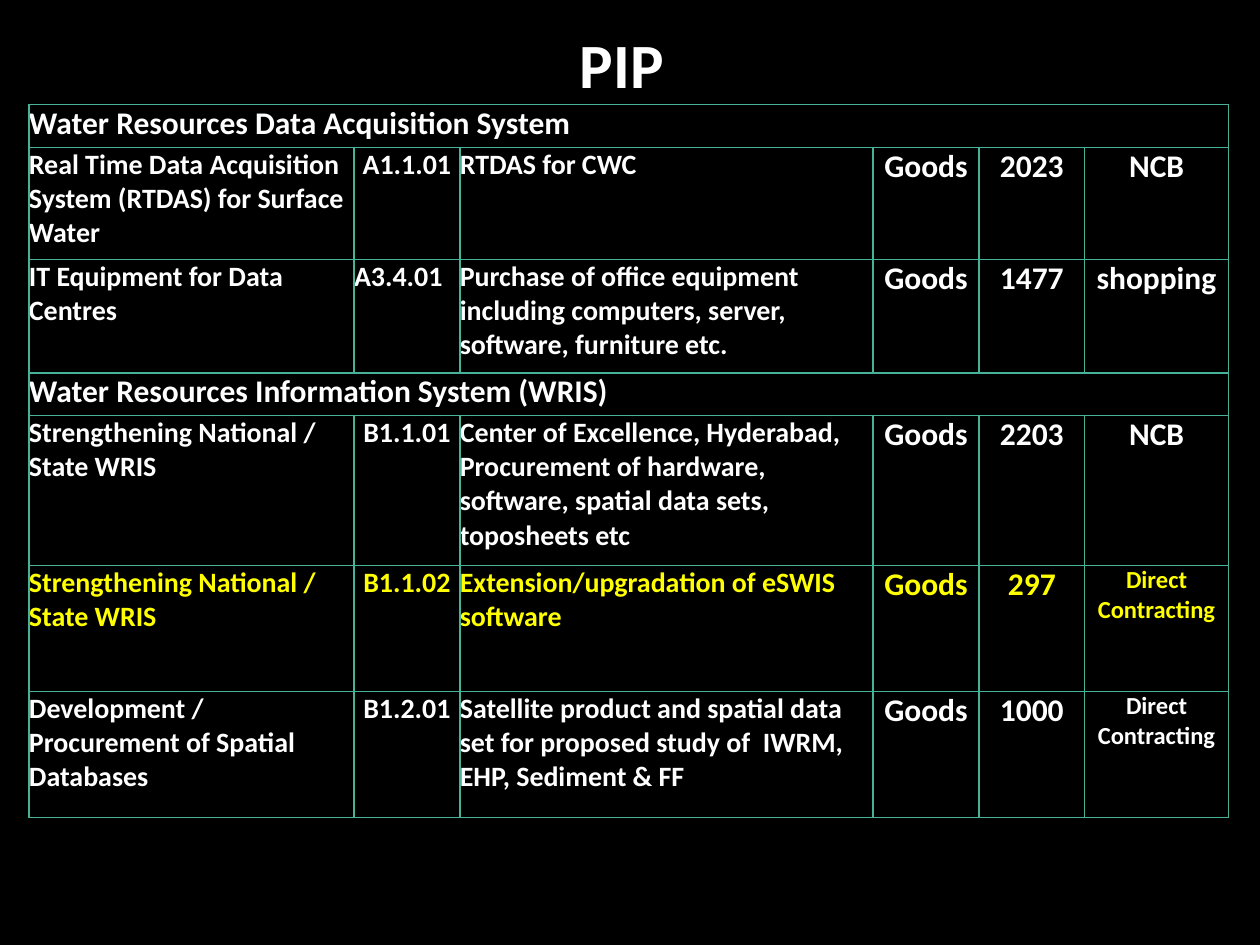
from lxml import etree
from pptx import Presentation
from pptx import util as u
from pptx.dml.color import RGBColor
from pptx.enum import text
from pptx.oxml import ns

THEME = {
    "font": "Calibri",
    "background": RGBColor.from_string("000000"),
    "normal": RGBColor.from_string("FFFFFF"),
    "highlight": RGBColor.from_string("FFFF00"),
    "border": "46B298",
    "title": 36,
    "section": 18,
    "detail": 16,
    "value": 18,
    "long_method": 14,
}

TITLE = "PIP"
SECTIONS = [
    ("Water Resources Data Acquisition System", [
        ("Real Time Data Acquisition System (RTDAS) for Surface Water",
         "A1.1.01", "RTDAS for CWC", "Goods", "2023", "NCB"),
        ("IT Equipment for Data Centres", "A3.4.01",
         "Purchase of office equipment  including computers, server, software, furniture etc.",
         "Goods", "1477", "shopping"),
    ]),
    ("Water Resources Information System (WRIS)", [
        ("Strengthening National / State WRIS", "B1.1.01",
         "Center of Excellence, Hyderabad, Procurement of hardware, software, "
         "spatial data sets, toposheets etc", "Goods", "2203", "NCB"),
        ("Strengthening National / State WRIS", "B1.1.02",
         "Extension/upgradation of eSWIS software",
         "Goods", "297", "Direct Contracting"),
        ("Development / Procurement of Spatial Databases", "B1.2.01",
         "Satellite product and spatial data set for proposed study of  IWRM, "
         "EHP, Sediment & FF", "Goods", "1000", "Direct Contracting"),
    ]),
]
HIGHLIGHTED_CODE = "B1.1.02"
LEFT_ALIGNED_CODE = "A3.4.01"
COLUMN_WIDTHS = [2.58, 0.84, 3.28, 0.84, 0.84, 1.14]
ROW_HEIGHTS = [0.34, 0.89, 0.9, 0.34, 1.19, 1, 1]
CENTRED_COLUMNS = {1, 3, 4, 5}
FIRST_VALUE_COLUMN = 3


def add_run(paragraph, wording, size, color):
    run = paragraph.add_run()
    run.text = wording
    run.font.name = THEME["font"]
    run.font.size = u.Pt(size)
    run.font.bold = True
    run.font.color.rgb = color


def format_cell(cell):
    cell.margin_left = cell.margin_right = cell.margin_top = cell.margin_bottom = 0
    properties = cell._tc.get_or_add_tcPr()
    for side in ("lnL", "lnR", "lnT", "lnB"):
        line = etree.SubElement(properties, ns.qn(f"a:{side}"), w=str(u.Pt(1)))
        fill = etree.SubElement(line, ns.qn("a:solidFill"))
        etree.SubElement(fill, ns.qn("a:srgbClr"), val=THEME["border"])
    cell.fill.background()


def write_cell(cell, wording, size, color, centred=False):
    paragraph = cell.text_frame.paragraphs[0]
    paragraph.alignment = text.PP_ALIGN.CENTER if centred else text.PP_ALIGN.LEFT
    add_run(paragraph, wording, size, color)


def write_item(table, row, item):
    code = item[1]
    color = THEME["highlight" if code == HIGHLIGHTED_CODE else "normal"]
    for column, wording in enumerate(item):
        size = THEME["value" if column >= FIRST_VALUE_COLUMN else "detail"]
        if wording == "Direct Contracting":
            size = THEME["long_method"]
        centred = column in CENTRED_COLUMNS and wording != LEFT_ALIGNED_CODE
        write_cell(table.cell(row, column), wording, size, color, centred)


def add_plan(slide):
    table = slide.shapes.add_table(
        len(ROW_HEIGHTS), len(COLUMN_WIDTHS), u.Inches(0.23), u.Inches(0.83),
        u.Inches(sum(COLUMN_WIDTHS)), u.Inches(sum(ROW_HEIGHTS))).table
    table.first_row = table.horz_banding = False
    for column, width in zip(table.columns, COLUMN_WIDTHS):
        column.width = u.Inches(width)
    for row, height in zip(table.rows, ROW_HEIGHTS):
        row.height = u.Inches(height)
    for cell in table.iter_cells():
        format_cell(cell)

    row = 0
    for heading, items in SECTIONS:
        table.cell(row, 0).merge(table.cell(row, len(COLUMN_WIDTHS) - 1))
        write_cell(table.cell(row, 0), heading, THEME["section"], THEME["normal"])
        for row, item in enumerate(items, row + 1):
            write_item(table, row, item)
        row += 1


def add_title(slide):
    title = slide.shapes.title
    title.left, title.top = u.Inches(0.02), u.Inches(0.25)
    title.width, title.height = u.Inches(9.83), u.Inches(0.5)
    frame = title.text_frame
    frame.auto_size = text.MSO_AUTO_SIZE.NONE
    frame.vertical_anchor = text.MSO_ANCHOR.MIDDLE
    heading = frame.paragraphs[0]
    heading.alignment = text.PP_ALIGN.CENTER
    add_run(heading, TITLE, THEME["title"], THEME["normal"])


def main():
    deck = Presentation()
    deck.slide_width, deck.slide_height = u.Inches(10), u.Inches(7.5)
    slide = deck.slides.add_slide(deck.slide_layouts.get_by_name("Title Only"))
    slide.background.fill.solid()
    slide.background.fill.fore_color.rgb = THEME["background"]
    add_title(slide)
    add_plan(slide)
    deck.save("out.pptx")


if __name__ == "__main__":
    main()
